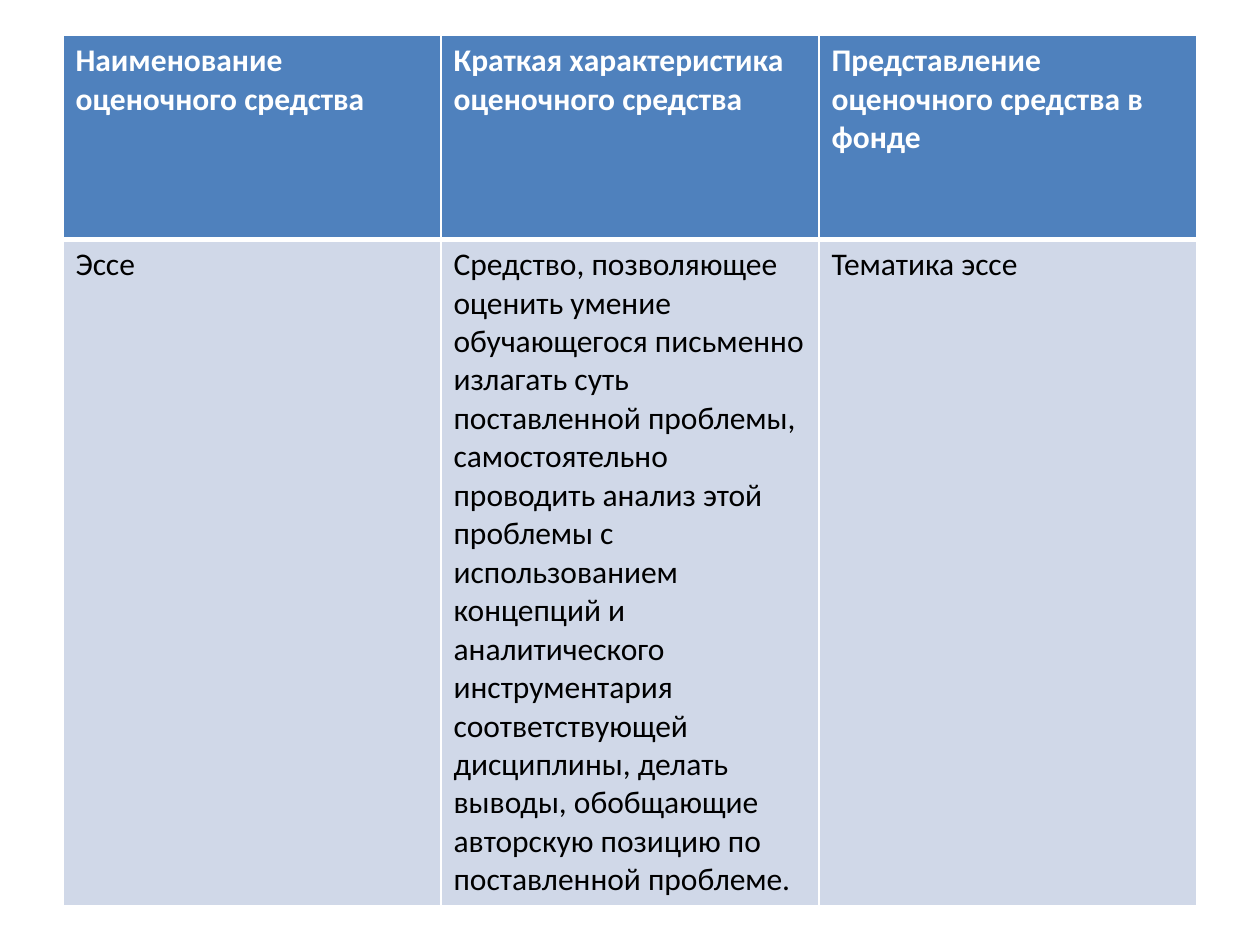
"""Build a slide with a table describing the essay as an assessment tool."""
from dataclasses import dataclass

from lxml import etree
from pptx import Presentation
from pptx.dml.color import RGBColor
from pptx.oxml.ns import qn
from pptx.table import _Cell
from pptx.util import Inches, Pt


@dataclass(frozen=True)
class Theme:
    font: str = "Calibri"
    text_size: int = 18
    border: str = "FFFFFF"
    thin: int = 1
    thick: int = 3


@dataclass(frozen=True)
class RowStyle:
    height: float
    fill: str
    color: str
    bold: bool
    top: int
    bottom: int


@dataclass(frozen=True)
class ToolRow:
    style: RowStyle
    texts: tuple[str, ...]


THEME = Theme()
HEADER = RowStyle(1.62, "4F81BD", "FFFFFF", True, THEME.thin, THEME.thick)
BODY = RowStyle(5.28, "D0D8E8", "000000", False, THEME.thick, THEME.thin)
LEFT, TOP, COLUMN_WIDTH = 0.5, 0.28, 3

ROWS = (
    ToolRow(HEADER, (
        "Наименование \vоценочного средства",
        "Краткая характеристика оценочного средства",
        "Представление оценочного средства в фонде",
    )),
    ToolRow(BODY, (
        "Эссе",
        "Средство, позволяющее оценить умение обучающегося письменно излагать "
        "суть поставленной проблемы, самостоятельно проводить анализ этой "
        "проблемы с использованием концепций и аналитического инструментария "
        "соответствующей дисциплины, делать выводы, обобщающие авторскую "
        "позицию по поставленной проблеме.",
        "Тематика эссе",
    )),
)


def set_borders(cell: _Cell, style: RowStyle) -> None:
    """Draw the four borders of a cell."""
    properties = cell._tc.get_or_add_tcPr()
    widths = {"L": THEME.thin, "R": THEME.thin, "T": style.top, "B": style.bottom}
    for side, width in widths.items():
        line = etree.SubElement(properties, qn(f"a:ln{side}"), w=str(Pt(width)))
        fill = etree.SubElement(line, qn("a:solidFill"))
        etree.SubElement(fill, qn("a:srgbClr"), val=THEME.border)


def fill_cell(cell: _Cell, text: str, style: RowStyle) -> None:
    """Write and format one table cell."""
    set_borders(cell, style)
    cell.fill.solid()
    cell.fill.fore_color.rgb = RGBColor.from_string(style.fill)
    cell.text_frame.text = text
    for run in cell.text_frame.paragraphs[0].runs:
        run.font.name = THEME.font
        run.font.size = Pt(THEME.text_size)
        run.font.bold = style.bold
        run.font.color.rgb = RGBColor.from_string(style.color)


def main() -> None:
    """Create and save the presentation."""
    presentation = Presentation()
    presentation.slide_width, presentation.slide_height = Inches(10), Inches(7.5)
    slide = presentation.slides.add_slide(presentation.slide_layouts[6])
    column_count = len(ROWS[0].texts)
    tools = slide.shapes.add_table(
        len(ROWS), column_count, Inches(LEFT), Inches(TOP),
        Inches(COLUMN_WIDTH * column_count),
        Inches(sum(row.style.height for row in ROWS)),
    ).table
    for table_row, row in zip(tools.rows, ROWS):
        table_row.height = Inches(row.style.height)
        for cell, text in zip(table_row.cells, row.texts):
            fill_cell(cell, text, row.style)
    presentation.save("out.pptx")


if __name__ == "__main__":
    main()
